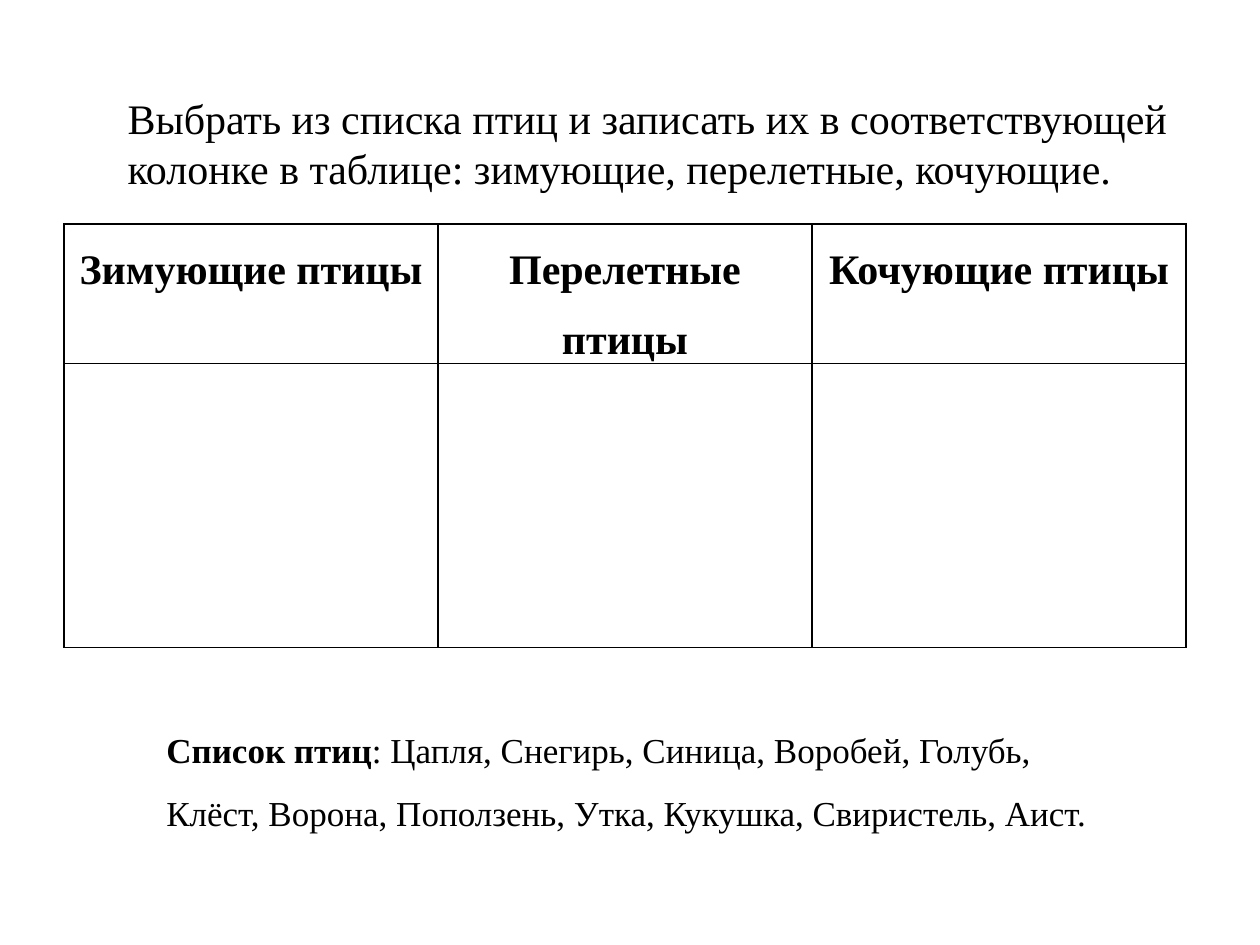
from lxml.etree import SubElement
from pptx import Presentation
from pptx.dml.color import RGBColor
from pptx.enum.text import MSO_ANCHOR, MSO_AUTO_SIZE, PP_ALIGN
from pptx.oxml.ns import qn
from pptx.util import Pt

SCALE = 914400 / 126
BLACK = "000000"
FONT = "Times New Roman"
TASK = ("Выбрать из списка птиц и записать их в соответствующей колонке "
        "в таблице: зимующие, перелетные, кочующие.")
HEADERS = ["Зимующие птицы", "Перелетные птицы", "Кочующие птицы"]
BIRDS = ["Цапля", "Снегирь", "Синица", "Воробей", "Голубь", "Клёст", "Ворона",
         "Поползень", "Утка", "Кукушка", "Свиристель", "Аист"]


def px(n):
    """Turn pixels into EMU."""
    return int(n * SCALE)


def color(value):
    """Turn a hex string into a colour."""
    return RGBColor.from_string(value)


def add_text(p, text, size=24, bold=False, fill=BLACK, align=PP_ALIGN.LEFT,
             spacing=None, after=None):
    """Add a formatted run to a paragraph."""
    p.alignment = align
    if spacing is not None:
        p.line_spacing = spacing
    if after is not None:
        p.space_after = Pt(after)
    r = p.add_run()
    r.text = text
    r.font.name = FONT
    r.font.size = Pt(size)
    r.font.bold = bold
    r.font.color.rgb = color(fill)


def add_borders(cell, fill=BLACK, width=1):
    """Draw a solid line on each side of a cell."""
    tc_pr = cell._tc.get_or_add_tcPr()
    for side in ("lnL", "lnR", "lnT", "lnB"):
        ln = SubElement(tc_pr, qn(f"a:{side}"), w=str(Pt(width)))
        SubElement(SubElement(ln, qn("a:solidFill")), qn("a:srgbClr"), val=fill)


def add_task(s, x, y, w, h):
    """Place the task wording in the title placeholder."""
    sp = s.shapes.title
    sp.left, sp.top, sp.width, sp.height = px(x), px(y), px(w), px(h)
    tf = sp.text_frame
    tf.word_wrap = True
    tf.auto_size = MSO_AUTO_SIZE.NONE
    tf.vertical_anchor = MSO_ANCHOR.TOP
    add_text(tf.paragraphs[0], TASK)


def add_bird_table(s, x, y, w, heights):
    """Place the table with one empty column for each kind of bird."""
    cols = len(HEADERS)
    table = s.shapes.add_table(len(heights), cols, px(x), px(y), px(w),
                               px(sum(heights))).table
    table.first_row = table.horz_banding = False
    for col in table.columns:
        col.width = px(w / cols)
    for row, height in zip(table.rows, heights):
        row.height = px(height)
    for cell in table.iter_cells():
        cell.margin_left = cell.margin_right = px(9)
        cell.margin_top = cell.margin_bottom = 0
        add_borders(cell)
        cell.fill.background()
    for cell, header in zip(table.rows[0].cells, HEADERS):
        add_text(cell.text_frame.paragraphs[0], header, bold=True,
                 align=PP_ALIGN.CENTER, spacing=1.5)


def add_bird_list(s, x, y, w, h):
    """Place the list of birds to sort."""
    tf = s.shapes.add_textbox(px(x), px(y), px(w), px(h)).text_frame
    tf.word_wrap = True
    p = tf.paragraphs[0]
    add_text(p, "Список птиц", size=20, bold=True, spacing=1.5, after=10)
    add_text(p, f": {', '.join(BIRDS)}.", size=20)


def main():
    """Build and save the slide."""
    prs = Presentation()
    prs.slide_width, prs.slide_height = px(1260), px(945)
    s = prs.slides.add_slide(prs.slide_layouts[5])
    add_bird_table(s, 64, 224, 1122, [121, 284])
    add_task(s, 115, 86, 1101, 115)
    add_bird_list(s, 154, 701, 983, 134)
    prs.save("out.pptx")


if __name__ == "__main__":
    main()
